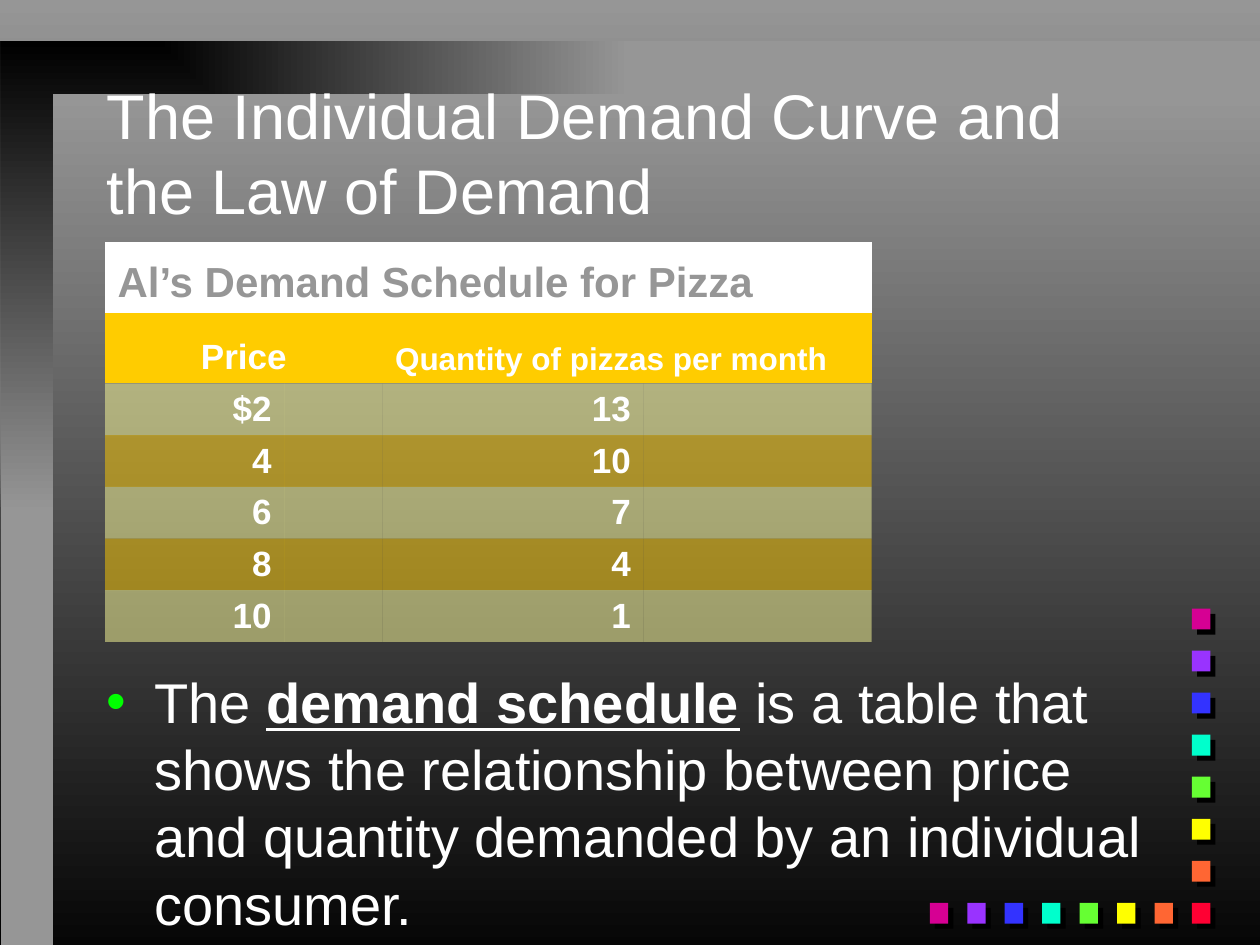
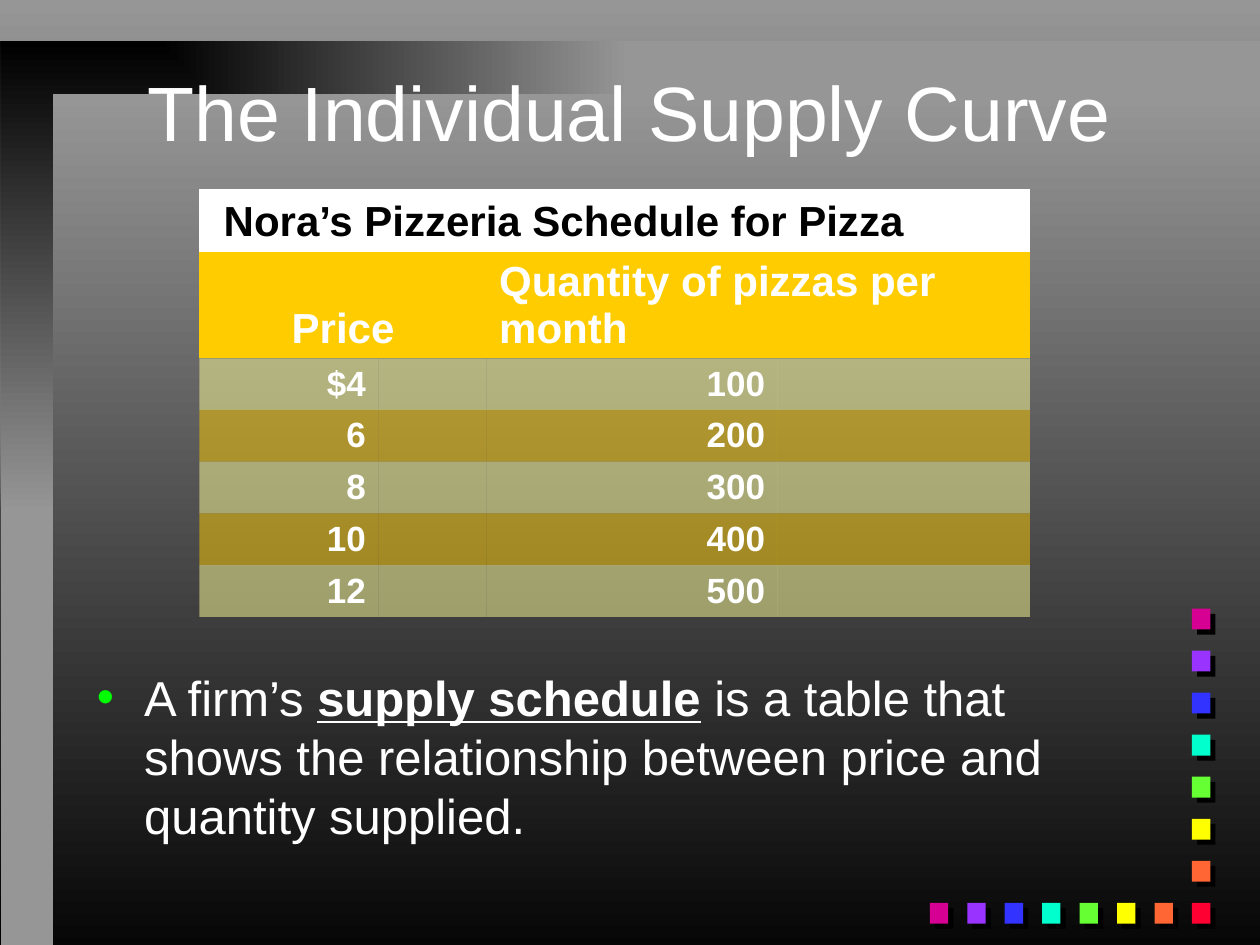
from lxml.etree import SubElement
from pptx import Presentation
from pptx.dml.color import RGBColor
from pptx.enum.shapes import MSO_SHAPE
from pptx.enum.text import MSO_ANCHOR, MSO_AUTO_SIZE, PP_ALIGN
from pptx.oxml import parse_xml
from pptx.oxml.ns import nsdecls, qn
from pptx.util import Cm, Pt

COLORS = {
    "text": "FFFFFF", "dark": "000000", "gray": "969696", "bullet": "00FF00",
    "header": "FFCC00", "light_row": "FFFF99",
}
SQUARE_COLORS = ["FF0033", "FF6633", "FFFF00", "66FF33",
                 "00FFCC", "3333FF", "9933FF", "D60093"]
FONT = "Arial"
PLAIN_TABLE_STYLE = "{2D5ABB26-0587-4C30-8999-92F81FD0307C}"
BODY_ROW_HEIGHT = 1.04


def rgb(name):
    return RGBColor.from_string(COLORS.get(name, name))


def fill_gradient(fill, start, end):
    """Fill from top to bottom with two colours."""
    fill.gradient()
    fill.gradient_angle = 270
    for stop, color in zip(fill.gradient_stops, (start, end)):
        stop.color.rgb = rgb(color)


class DeckBuilder:
    def __init__(self):
        self.presentation = Presentation()
        self.presentation.slide_width = Cm(25.4)
        self.presentation.slide_height = Cm(19.05)
        self.master = self.presentation.slide_master
        self.slide = None
        self.decorated = False

    def add_slide(self):
        layout = self.presentation.slide_layouts[1]
        self.slide = self.presentation.slides.add_slide(layout)
        if not self.decorated:
            self.decorate_master()

    def decorate_master(self):
        """Give the master its background, frame and two runs of squares."""
        self.decorated = True
        fill_gradient(self.master.background.fill, "gray", "dark")

        frame = self.add_master_box(0.02, 0.83, 25.38, 19.02, 1.1)
        fill_gradient(frame.fill, "dark", "gray")
        direction = next(frame.element.iter(qn("a:lin")))
        corner = parse_xml(
            f'<a:path {nsdecls("a")} path="rect">'
            '<a:fillToRect l="0" t="0" r="100000" b="100000"/></a:path>')
        direction.getparent().replace(direction, corner)

        panel = self.add_master_box(1.07, 1.9, 24.33, 17.95, 1.1)
        fill_gradient(panel.fill, "gray", "dark")

        left, top = 24.03, 18.2
        across = [(left - 0.755 * i, top, color)
                  for i, color in enumerate(SQUARE_COLORS)]
        upward = [(left, top - 0.847 * i, color)
                  for i, color in enumerate(SQUARE_COLORS)]
        for x, y, color in across + upward[1:]:
            square = self.add_master_box(x, y, 0.37, 0.42, 4.2)
            square.fill.solid()
            square.fill.fore_color.rgb = rgb(color)

    def add_master_box(self, left, top, width, height, shadow_distance):
        """Draw a rectangle with a hard shadow and move it to the master."""
        shape = self.slide.shapes.add_shape(
            MSO_SHAPE.RECTANGLE, Cm(left), Cm(top), Cm(width), Cm(height))
        shape.line.fill.background()
        shape.shadow.inherit = False
        effects = shape.element.spPr.find(qn("a:effectLst"))
        shadow = SubElement(effects, qn("a:outerShdw"), blurRad="0",
                            dist=str(Pt(shadow_distance)), dir="2700000",
                            algn="ctr", rotWithShape="0")
        SubElement(shadow, qn("a:srgbClr"), val=COLORS["dark"])
        tree = self.master.element.cSld.spTree
        shape.element.nvSpPr.cNvPr.id = 100 + len(tree)
        tree.append(shape.element)
        return shape

    def add_run(self, paragraph, text, size, color="text", **formats):
        run = paragraph.add_run()
        run.text = text
        for name, value in {"name": FONT, "size": Pt(size), **formats}.items():
            setattr(run.font, name, value)
        run.font.color.rgb = rgb(color)

    def place(self, shape, left, top, width, height):
        box = {"left": left, "top": top, "width": width, "height": height}
        for name, value in box.items():
            setattr(shape, name, Cm(value))
        shape.text_frame.auto_size = MSO_AUTO_SIZE.NONE
        return shape.text_frame

    def add_title(self, lines, size, alignment, bottom_margin=0.13):
        frame = self.place(self.slide.shapes.title, 1.9, 1.47, 21.59, 3.18)
        frame.vertical_anchor = MSO_ANCHOR.MIDDLE
        frame.margin_bottom = Cm(bottom_margin)
        paragraph = frame.paragraphs[0]
        paragraph.alignment = alignment
        for index, line in enumerate(lines):
            if index:
                paragraph.add_line_break()
            self.add_run(paragraph, line, size)

    def add_definition(self, box, before, term, after, size):
        """Fill the body with one bullet whose key term stands out."""
        paragraph = self.place(self.slide.placeholders[1], *box).paragraphs[0]
        bullet_color = SubElement(
            paragraph._p.get_or_add_pPr(), qn("a:buClr"))
        SubElement(bullet_color, qn("a:srgbClr"), val=COLORS["bullet"])
        self.add_run(paragraph, before, size)
        self.add_run(paragraph, term, size, bold=True, underline=True)
        self.add_run(paragraph, after, size)

    def fill_cell(self, cell, color, opacity=100):
        cell.fill.solid()
        cell.fill.fore_color.rgb = rgb(color)
        if opacity < 100:
            node = next(cell._tc.tcPr.iter(qn("a:srgbClr")))
            SubElement(node, qn("a:alpha"), val=str(opacity * 1000))

    def write_cell(self, cell, text, size, color="text",
                   alignment=PP_ALIGN.LEFT, anchor=MSO_ANCHOR.BOTTOM):
        cell.vertical_anchor = anchor
        paragraph = cell.text_frame.paragraphs[0]
        paragraph.alignment = alignment
        self.add_run(paragraph, text, size, color, bold=True)

    def add_schedule(self, left, top, widths, header_heights, caption,
                     caption_color, header_sizes, rows, caption_margin=0.25):
        """Add a price table: caption, header, then banded rows."""
        heights = [*header_heights, *[BODY_ROW_HEIGHT] * len(rows)]
        frame = self.slide.shapes.add_table(
            len(heights), len(widths), Cm(left), Cm(top),
            Cm(sum(widths)), Cm(sum(heights)))
        next(frame.element.iter(qn("a:tableStyleId"))).text = PLAIN_TABLE_STYLE
        table = frame.table
        for column, width in zip(table.columns, widths):
            column.width = Cm(width)
        for row, height in zip(table.rows, heights):
            row.height = Cm(height)

        title_cell = table.cell(0, 0)
        title_cell.merge(table.cell(0, 3))
        title_cell.margin_left = Cm(caption_margin)
        self.fill_cell(title_cell, "text")
        self.write_cell(title_cell, caption, 24, caption_color)

        headers = [("Price", PP_ALIGN.CENTER),
                   ("Quantity of pizzas per month", PP_ALIGN.LEFT)]
        for index, (text, alignment) in enumerate(headers):
            cell = table.cell(1, 2 * index)
            cell.merge(table.cell(1, 2 * index + 1))
            self.fill_cell(cell, "header")
            self.write_cell(cell, text, header_sizes[index],
                            alignment=alignment)

        for index, values in enumerate(rows):
            band = "header" if index % 2 else "light_row"
            for column in range(len(widths)):
                self.fill_cell(table.cell(index + 2, column), band, 50)
            for column, value in zip((0, 2), values):
                self.write_cell(table.cell(index + 2, column), value, 20,
                                alignment=PP_ALIGN.RIGHT,
                                anchor=MSO_ANCHOR.TOP)


def build_demand_slide(deck):
    deck.add_slide()
    deck.add_title(["The Individual Demand Curve and", "the Law of Demand"],
                   36, PP_ALIGN.LEFT)
    deck.add_definition(
        (1.9, 13.33, 22.02, 5.72), "The ", "demand schedule",
        " is a table that shows the relationship between price and quantity "
        "demanded by an individual consumer.", 32)
    deck.add_schedule(
        2.12, 4.87, [3.61, 1.98, 5.26, 4.6], [1.43, 1.43],
        "Al’s Demand Schedule for Pizza", "gray", (20, 18),
        [("$2", "13"), ("4", "10"), ("6", "7"), ("8", "4"), ("10", "1")])


def build_supply_slide(deck):
    deck.add_slide()
    deck.add_title(["The Individual Supply Curve"], 44, PP_ALIGN.CENTER,
                   bottom_margin=1.8)
    deck.add_definition(
        (1.7, 13.33, 21.59, 4.34), "A firm’s ", "supply schedule",
        " is a table that shows the relationship between price and quantity "
        "supplied.", 28)
    deck.add_schedule(
        4.02, 3.81, [3.61, 2.18, 5.87, 5.08], [1.27, 2.14],
        "Nora’s Pizzeria Schedule for Pizza", "dark", (24, 24),
        [("$4", "100"), ("6", "200"), ("8", "300"), ("10", "400"),
         ("12", "500")], caption_margin=0.49)


def main():
    deck = DeckBuilder()
    build_demand_slide(deck)
    build_supply_slide(deck)
    deck.presentation.save("out.pptx")


if __name__ == "__main__":
    main()
